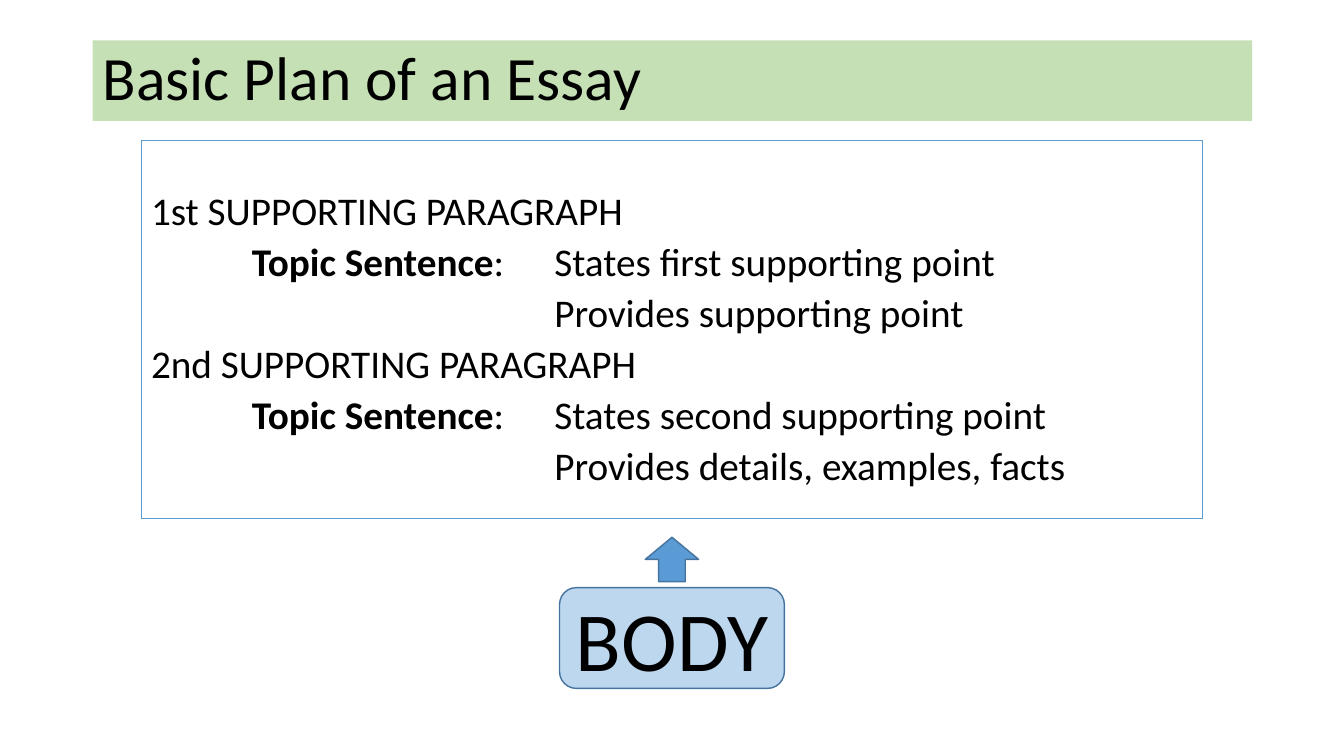
from pptx import Presentation
from pptx.dml.color import RGBColor
from pptx.enum.shapes import MSO_SHAPE
from pptx.enum.text import MSO_ANCHOR, PP_ALIGN
from pptx.util import Inches, Pt


def color(value):
    return RGBColor.from_string(value)


class EssaySlide:
    """Holds the slide and its text style, and adds each kind of element."""

    font = "Calibri"
    ink = "000000"

    def __init__(self, deck):
        self.page = deck.slides.add_slide(deck.slide_layouts[6])

    def shape(self, kind, left, top, width, height, fill=None, line=None, weight=1):
        box = self.page.shapes.add_shape(
            kind, Inches(left), Inches(top), Inches(width), Inches(height))
        box.shadow.inherit = False
        if fill:
            box.fill.solid()
            box.fill.fore_color.rgb = color(fill)
        else:
            box.fill.background()
        if line:
            box.line.color.rgb = color(line)
            box.line.width = Pt(weight)
        else:
            box.line.fill.background()
        return box

    def style(self, span, size, bold=False):
        span.font.name = self.font
        span.font.size = Pt(size)
        span.font.bold = bold
        span.font.color.rgb = color(self.ink)

    def label(self, box, text, size, align, spacing=1.0):
        frame = box.text_frame
        frame.text = text
        frame.vertical_anchor = MSO_ANCHOR.MIDDLE
        frame.word_wrap = False
        para = frame.paragraphs[0]
        para.alignment = align
        para.line_spacing = spacing
        self.style(para.runs[0], size)

    def outline(self, box, rows, size):
        frame = box.text_frame
        frame.word_wrap = True
        frame.vertical_anchor = MSO_ANCHOR.TOP
        frame.margin_top = Inches(0.55)
        for index, (indent, term, text) in enumerate(rows):
            para = frame.add_paragraph() if index else frame.paragraphs[0]
            para.alignment = PP_ALIGN.LEFT
            para.line_spacing = 0.8
            para.space_before = Pt(9.5)
            properties = para._p.get_or_add_pPr()
            properties.set("marL", str(Inches(indent)))
            properties.set("indent", "0")
            for words, bold in ((term, True), (text, False)):
                if words:
                    span = para.add_run()
                    span.text = words
                    self.style(span, size, bold)


def main():
    deck = Presentation()
    deck.slide_width = Inches(13.33)
    deck.slide_height = Inches(7.5)
    slide = EssaySlide(deck)

    title = slide.shape(MSO_SHAPE.RECTANGLE, 0.92, 0.4, 11.5, 0.8, "C5E0B4")
    slide.label(title, "Basic Plan of an Essay", 44, PP_ALIGN.LEFT, 0.9)

    rows = []
    for ordinal, point, support in (
        ("1st", "first", "supporting point"),
        ("2nd", "second", "details, examples, facts"),
    ):
        rows += [
            (0, "", f"{ordinal} SUPPORTING PARAGRAPH"),
            (1, "Topic Sentence", f":\tStates {point} supporting point"),
            (4, "", f"Provides {support}"),
        ]
    plan = slide.shape(MSO_SHAPE.RECTANGLE, 1.4, 1.39, 10.53, 3.75,
                       line="5B9BD5", weight=0.75)
    slide.outline(plan, rows, 28)

    body = slide.shape(MSO_SHAPE.ROUNDED_RECTANGLE, 5.55, 5.83, 2.23, 1,
                       "BDD7EE", "43739E")
    slide.label(body, "BODY", 60, PP_ALIGN.CENTER)
    slide.shape(MSO_SHAPE.UP_ARROW, 6.4, 5.33, 0.53, 0.44, "5B9BD5", "43739E")

    deck.save("out.pptx")


if __name__ == "__main__":
    main()
